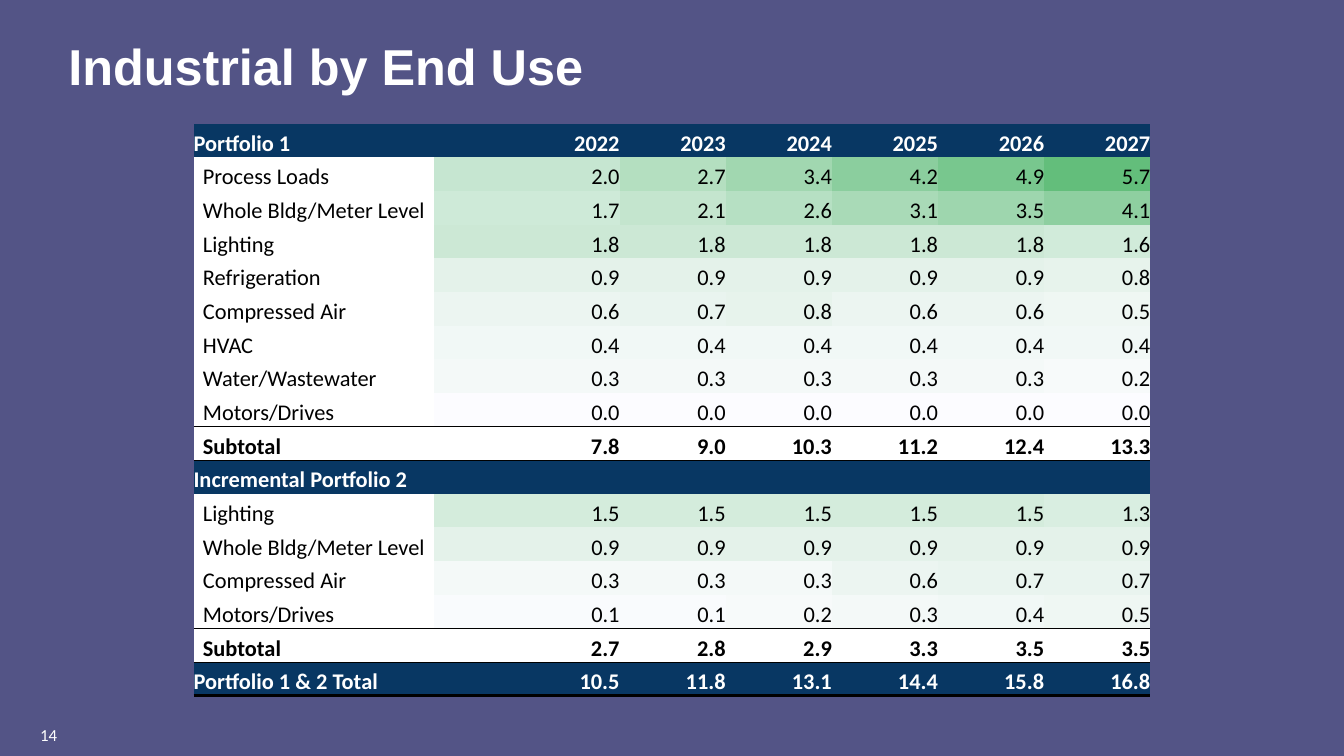
"""Build the slide of industrial values by end use."""
from lxml import etree
from pptx import Presentation, util as u
from pptx.dml.color import RGBColor
from pptx.enum import text
from pptx.oxml import ns

BACK, NAVY, WHITE, BLACK = "535486", "083763", "FFFFFF", "000000"
LOW, HIGH, PEAK = "FCFCFF", "63BE7B", 5.7
PLAIN = "{2D5ABB26-0587-4C30-8999-92F81FD0307C}"
COLS = [1.79, 1.38] + [0.79] * 5
ROWS = [
    ("head", "Portfolio 1", "2022 2023 2024 2025 2026 2027"),
    ("item", "Process Loads", "2.0 2.7 3.4 4.2 4.9 5.7"),
    ("item", "Whole Bldg/Meter Level", "1.7 2.1 2.6 3.1 3.5 4.1"),
    ("item", "Lighting", "1.8 1.8 1.8 1.8 1.8 1.6"),
    ("item", "Refrigeration", "0.9 0.9 0.9 0.9 0.9 0.8"),
    ("item", "Compressed Air", "0.6 0.7 0.8 0.6 0.6 0.5"),
    ("item", "HVAC", "0.4 0.4 0.4 0.4 0.4 0.4"),
    ("item", "Water/Wastewater", "0.3 0.3 0.3 0.3 0.3 0.2"),
    ("item", "Motors/Drives", "0.0 0.0 0.0 0.0 0.0 0.0"),
    ("sum", "Subtotal", "7.8 9.0 10.3 11.2 12.4 13.3"),
    ("head", "Incremental Portfolio 2", ""),
    ("item", "Lighting", "1.5 1.5 1.5 1.5 1.5 1.3"),
    ("item", "Whole Bldg/Meter Level", "0.9 0.9 0.9 0.9 0.9 0.9"),
    ("item", "Compressed Air", "0.3 0.3 0.3 0.6 0.7 0.7"),
    ("item", "Motors/Drives", "0.1 0.1 0.2 0.3 0.4 0.5"),
    ("sum", "Subtotal", "2.7 2.8 2.9 3.3 3.5 3.5"),
    ("head", "Portfolio 1 & 2 Total", "10.5 11.8 13.1 14.4 15.8 16.8"),
]
RULES = {9: 0.5, 15: 0.5, 16: 0.5, 17: 2}
LABELS = [
    ("14", (0.2, 5.34, 0.75, 0.25), "Calibri", 9, False),
    ("Industrial by End Use", (0.41, 0.05, 9.49, 0.87), "Arial", 27, True),
]


def color(code):
    return RGBColor.from_string(code)


def shade(value):
    part = value / PEAK
    ends = zip(bytes.fromhex(LOW), bytes.fromhex(HIGH))
    return "".join(f"{round(a + (b - a) * part):02X}" for a, b in ends)


def write(frame, words, name, size, bold, ink):
    para = frame.paragraphs[0]
    if not words:
        para._p.get_or_add_endParaRPr().set("sz", str(size * 100))
        return
    run = para.add_run()
    run.text = words
    for key, val in dict(name=name, size=u.Pt(size), bold=bold).items():
        setattr(run.font, key, val)
    run.font.color.rgb = color(ink)


def border(cell, side, width):
    line = etree.SubElement(cell._tc.get_or_add_tcPr(), ns.qn(f"a:ln{side}"), w=str(u.Pt(width)))
    fill = etree.SubElement(line, ns.qn("a:solidFill"))
    etree.SubElement(fill, ns.qn("a:srgbClr"), val=BLACK)


def paint(cell, row, col, kind, words):
    for side, edge in (("T", row), ("B", row + 1)):
        if edge in RULES:
            border(cell, side, RULES[edge])
    indent = 0.07 if col == 0 and kind != "head" else 0
    form = dict(margin_left=u.Inches(indent), margin_right=0, margin_top=0,
                margin_bottom=0, vertical_anchor=text.MSO_ANCHOR.BOTTOM)
    for key, val in form.items():
        setattr(cell, key, val)
    back = NAVY if kind == "head" else WHITE
    if kind == "item" and col:
        back = shade(float(words))
    cell.fill.solid()
    cell.fill.fore_color.rgb = color(back)
    ink = WHITE if kind == "head" else BLACK
    write(cell.text_frame, words, "Calibri", 12, kind != "item", ink)
    if col:
        cell.text_frame.paragraphs[0].alignment = text.PP_ALIGN.RIGHT


def main():
    deck = Presentation()
    deck.slide_width = u.Inches(10)
    deck.slide_height = deck.slide_width * 9 // 16
    slide = deck.slides.add_slide(deck.slide_layouts[6])
    slide.background.fill.solid()
    slide.background.fill.fore_color.rgb = color(BACK)
    for words, box, name, size, bold in LABELS:
        frame = slide.shapes.add_textbox(*map(u.Inches, box)).text_frame
        frame.word_wrap = True
        frame.vertical_anchor = text.MSO_ANCHOR.MIDDLE
        write(frame, words, name, size, bold, WHITE)
    area = map(u.Inches, (1.44, 0.92, sum(COLS), 4.26))
    table = slide.shapes.add_table(len(ROWS), len(COLS), *area).table
    table.first_row = table.horz_banding = False
    table._tbl.tblPr.find(ns.qn("a:tableStyleId")).text = PLAIN
    for col, width in enumerate(COLS):
        table.columns[col].width = u.Inches(width)
    for row, (kind, label, values) in enumerate(ROWS):
        cells = [label] + (values.split() or [""] * (len(COLS) - 1))
        for col, words in enumerate(cells):
            paint(table.cell(row, col), row, col, kind, words)
    deck.save("out.pptx")


if __name__ == "__main__":
    main()
